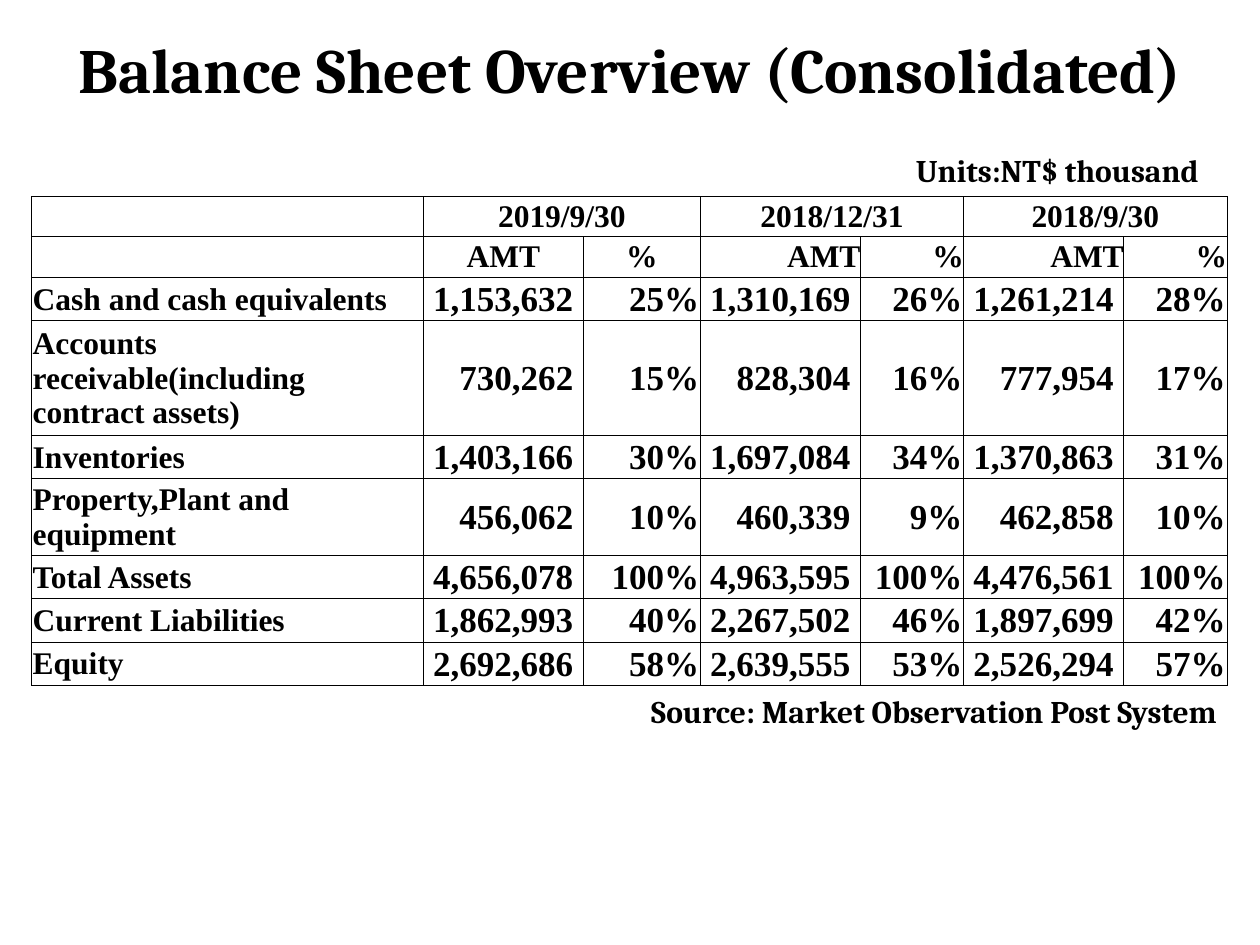
from dataclasses import dataclass

from lxml import etree
from pptx import Presentation
from pptx.dml.color import RGBColor
from pptx.enum.text import MSO_ANCHOR, MSO_AUTO_SIZE, PP_ALIGN
from pptx.oxml.ns import qn
from pptx.util import Inches, Pt

LEFT, MID, RIGHT = PP_ALIGN.LEFT, PP_ALIGN.CENTER, PP_ALIGN.RIGHT
TOP, CENTER = MSO_ANCHOR.TOP, MSO_ANCHOR.MIDDLE
GROW, FIXED = MSO_AUTO_SIZE.SHAPE_TO_FIT_TEXT, MSO_AUTO_SIZE.NONE
INK = "000000"
HEAD, BODY = "Cambria", "Times New Roman"


@dataclass
class Label:
    text: str
    place: tuple[float, float, float, float]
    size: int = 18
    align: PP_ALIGN = LEFT
    anchor: MSO_ANCHOR = TOP
    fit: MSO_AUTO_SIZE = GROW


@dataclass
class Item:
    name: str
    sums: tuple[str, str, str]
    rates: tuple[int, int, int]


LABELS = [
    Label("Balance Sheet Overview (Consolidated)", (0.2, 0.17, 9.6, 0.75),
          36, MID, CENTER, FIXED),
    Label("Units:NT$ thousand", (7.17, 1.15, 2.65, 0.4)),
    Label("Source: Market Observation Post System", (5.07, 5.44, 5.15, 0.4)),
]
DATES = ["2019/9/30", "2018/12/31", "2018/9/30"]
ITEMS = [
    Item("Cash and cash equivalents",
         ("1,153,632", "1,310,169", "1,261,214"), (25, 26, 28)),
    Item("Accounts receivable(including contract assets)",
         ("730,262", "828,304", "777,954"), (15, 16, 17)),
    Item("Inventories",
         ("1,403,166", "1,697,084", "1,370,863"), (30, 34, 31)),
    Item("Property,Plant and equipment",
         ("456,062", "460,339", "462,858"), (10, 9, 10)),
    Item("Total Assets",
         ("4,656,078", "4,963,595", "4,476,561"), (100, 100, 100)),
    Item("Current Liabilities",
         ("1,862,993", "2,267,502", "1,897,699"), (40, 46, 42)),
    Item("Equity",
         ("2,692,686", "2,639,555", "2,526,294"), (58, 53, 57)),
]
WIDTHS = [3.11, 1.27, 0.93, 1.27, 0.82, 1.27, 0.82]
HEIGHTS = [0.32, 0.32, 0.32, 0.62, 0.32, 0.48, 0.32, 0.32, 0.32]


def color(code: str) -> RGBColor:
    return RGBColor.from_string(code)


def write(frame, text: str, face: str, size: int, align: PP_ALIGN) -> None:
    para = frame.paragraphs[0]
    para.alignment = align
    run = para.add_run()
    run.text = text
    style = {"name": face, "size": Pt(size), "bold": True}
    for key, value in style.items():
        setattr(run.font, key, value)
    run.font.color.rgb = color(INK)


def draw_label(slide, label: Label) -> None:
    box = slide.shapes.add_textbox(*map(Inches, label.place))
    frame = box.text_frame
    style = {"word_wrap": True, "auto_size": label.fit,
             "vertical_anchor": label.anchor}
    for key, value in style.items():
        setattr(frame, key, value)
    write(frame, label.text, HEAD, label.size, label.align)


def frame_cell(cell, pad: float) -> None:
    props = cell._tc.get_or_add_tcPr()
    for side in ("lnL", "lnR", "lnT", "lnB"):
        line = etree.SubElement(props, qn(f"a:{side}"), w=str(Pt(0.5)))
        fill = etree.SubElement(line, qn("a:solidFill"))
        etree.SubElement(fill, qn("a:srgbClr"), val=INK)
    cell.fill.background()
    style = {"margin_left": Inches(pad), "margin_right": Inches(pad),
             "margin_top": Inches(pad), "margin_bottom": 0,
             "vertical_anchor": CENTER}
    for key, value in style.items():
        setattr(cell, key, value)


def draw_table(slide) -> None:
    shape = slide.shapes.add_table(
        len(HEIGHTS), len(WIDTHS), Inches(0.25), Inches(1.56),
        Inches(sum(WIDTHS)), Inches(sum(HEIGHTS)))
    table = shape.table
    table.first_row = table.horz_banding = False
    for col, width in zip(table.columns, WIDTHS):
        col.width = Inches(width)
    for row, (line, height) in enumerate(zip(table.rows, HEIGHTS)):
        line.height = Inches(height)
        for cell in line.cells:
            frame_cell(cell, 0 if row < 2 else 0.01)

    def put(row: int, col: int, text: str, size: int, align: PP_ALIGN) -> None:
        write(table.cell(row, col).text_frame, text, BODY, size, align)

    for num, date in enumerate(DATES):
        col = 1 + 2 * num
        table.cell(0, col).merge(table.cell(0, col + 1))
        put(0, col, date, 18, MID)
        side = RIGHT if num else MID
        put(1, col, "AMT", 18, side)
        put(1, col + 1, "%", 18, side)
        for row, item in enumerate(ITEMS, 2):
            put(row, col, f"{item.sums[num]} ", 20, RIGHT)
            put(row, col + 1, f"{item.rates[num]}%", 20, RIGHT)
    for row, item in enumerate(ITEMS, 2):
        put(row, 0, item.name, 18, LEFT)


def main() -> None:
    deck = Presentation()
    deck.slide_width, deck.slide_height = Inches(10), Inches(7.5)
    slide = deck.slides.add_slide(deck.slide_layouts[6])
    for label in LABELS:
        draw_label(slide, label)
    draw_table(slide)
    deck.save("out.pptx")


if __name__ == "__main__":
    main()
